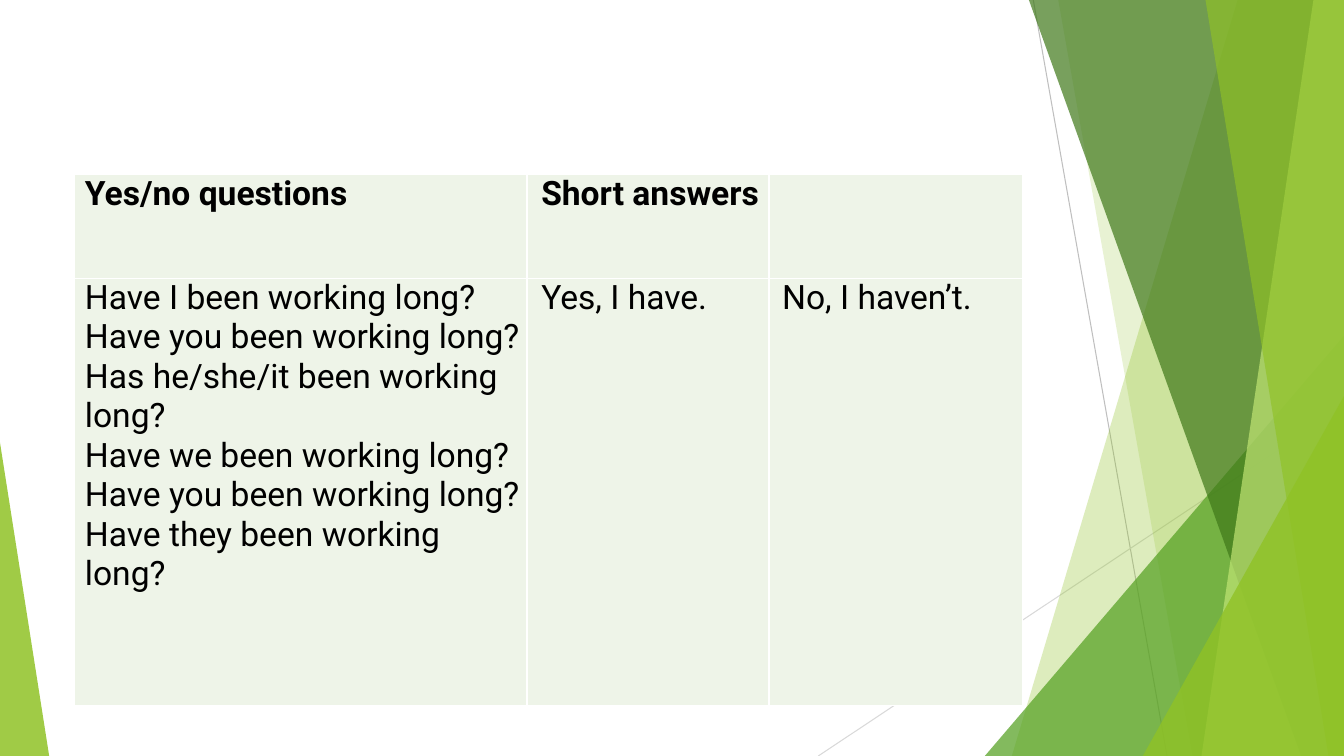
from lxml import etree
from pptx import Presentation
from pptx.dml.color import RGBColor
from pptx.enum.shapes import MSO_CONNECTOR, MSO_SHAPE
from pptx.oxml.ns import qn
from pptx.util import Cm, Pt

STRAIGHT = MSO_CONNECTOR.STRAIGHT
TRIANGLE = MSO_SHAPE.ISOSCELES_TRIANGLE

COLORS = {
    "grey": "BFBFBF", "pale grey": "D9D9D9", "lime": "90C226",
    "green": "54A021", "forest": "3F7819", "light lime": "C0E474",
    "cell": "EEF4E8", "text": "000000", "border": "FFFFFF",
}

# Lengths in cm
WIDTH, HEIGHT = 33.87, 19.05
RAYS = [  # from x, from y, to x, to y, colour
    (26.04, 0, 29.41, HEIGHT, "grey"),
    (WIDTH, 10.24, 20.62, HEIGHT, "pale grey"),
]
FACETS = [  # kind, measures, colour, opacity in percent
    ("band", (31.19, 25.5), "lime", 30),  # left edge at top and at bottom
    ("band", (26.67, 30.05), "lime", 20),
    ("peak", (24.82, 8.46, WIDTH, 1), "green", 72),  # left, top, right, apex
    ("band", (25.93, 32.79), "forest", 70),
    ("band", (33.1, 30.28), "light lime", 70),
    ("band", (30.38, 33.48), "lime", 65),
    ("peak", (28.8, 9.98, WIDTH, 1), "lime", 80),
    ("peak", (0, 11.15, 1.24, 0), "lime", 85),
]

TABLE_LEFT, TABLE_TOP = 1.88, 4.39
COLUMN_WIDTHS = [11.4, 6.1, 6.38]
ROW_HEIGHTS = [2.62, 10.77]
COLUMN_INDENTS = [0.13, 0.23, 0.2]
ROWS = [
    [["Yes/no questions"], ["Short answers"], []],
    [
        [
            "Have I been working long?",
            "Have you been working long?",
            "Has he/she/it been working long?",
            "Have we been working long?",
            "Have you been working long?",
            "Have they been working long?",
        ],
        ["Yes, I have."],
        ["No, I haven’t."],
    ],
]
CELL_FORMAT = {
    "margin_left": Cm(0.13), "margin_right": Cm(0.13),
    "margin_top": 0, "margin_bottom": 0,
}
FONT_FORMAT = {"name": "Roboto", "size": Pt(24)}


def apply_format(target, values):
    for name, value in values.items():
        setattr(target, name, value)


def rgb(color):
    return RGBColor.from_string(COLORS[color])


def add_ray(shapes, x1, y1, x2, y2, color):
    ray = shapes.add_connector(STRAIGHT, Cm(x1), Cm(y1), Cm(x2), Cm(y2))
    ray.line.color.rgb = rgb(color)
    ray.line.width = Pt(0.75)
    etree.SubElement(ray._element.spPr, qn("a:effectLst"))


def add_band(shapes, top_x, bottom_x):
    """Draw a full-height facet that reaches the right edge of the slide."""
    builder = shapes.build_freeform(Cm(top_x), 0)
    builder.add_line_segments([
        (Cm(WIDTH), 0), (Cm(WIDTH), Cm(HEIGHT)), (Cm(bottom_x), Cm(HEIGHT)),
    ])
    return builder.convert_to_shape()


def add_peak(shapes, left, top, right, apex):
    """Draw a triangle that stands on the bottom edge of the slide."""
    peak = shapes.add_shape(
        TRIANGLE, Cm(left), Cm(top), Cm(right - left), Cm(HEIGHT - top))
    peak.adjustments[0] = apex
    return peak


def paint_facet(facet, color, opacity):
    facet.shadow.inherit = False
    facet.line.fill.background()
    facet.fill.solid()
    facet.fill.fore_color.rgb = rgb(color)
    color_element = facet._element.spPr.find(qn("a:solidFill"))[0]
    etree.SubElement(color_element, qn("a:alpha"), val=str(opacity * 1000))


def add_borders(cell):
    properties = cell._tc.get_or_add_tcPr()
    for position, side in enumerate(("lnL", "lnR", "lnT", "lnB")):
        border = etree.Element(qn(f"a:{side}"), w=str(Pt(1)))
        fill = etree.SubElement(border, qn("a:solidFill"))
        etree.SubElement(fill, qn("a:srgbClr"), val=COLORS["border"])
        properties.insert(position, border)


def fill_cell(cell, lines, indent, bold):
    apply_format(cell, CELL_FORMAT)
    cell.fill.solid()
    cell.fill.fore_color.rgb = rgb("cell")
    add_borders(cell)
    if not lines:
        return
    cell.text = "\n".join(lines)
    paragraphs = cell.text_frame.paragraphs
    for paragraph in paragraphs:
        paragraph._p.get_or_add_pPr().set("marL", str(Cm(indent)))
        font = paragraph.runs[0].font
        apply_format(font, FONT_FORMAT)
        font.bold = bold
        font.color.rgb = rgb("text")
    paragraphs[0].space_before = Pt(6)
    paragraphs[-1].space_after = Pt(6)


def add_question_table(shapes):
    table = shapes.add_table(
        len(ROWS), len(COLUMN_WIDTHS), Cm(TABLE_LEFT), Cm(TABLE_TOP),
        Cm(sum(COLUMN_WIDTHS)), Cm(sum(ROW_HEIGHTS))).table
    apply_format(table, {"first_row": False, "horz_banding": False})
    for column, width in zip(table.columns, COLUMN_WIDTHS):
        column.width = Cm(width)
    for r, (height, answers) in enumerate(zip(ROW_HEIGHTS, ROWS)):
        table.rows[r].height = Cm(height)
        for c, (lines, indent) in enumerate(zip(answers, COLUMN_INDENTS)):
            fill_cell(table.cell(r, c), lines, indent, bold=r == 0)


def main():
    presentation = Presentation()
    apply_format(presentation, {"slide_width": Cm(WIDTH), "slide_height": Cm(HEIGHT)})
    blank_layout = presentation.slide_layouts[6]
    shapes = presentation.slides.add_slide(blank_layout).shapes
    for ray in RAYS:
        add_ray(shapes, *ray)
    builders = {"band": add_band, "peak": add_peak}
    for kind, measures, color, opacity in FACETS:
        paint_facet(builders[kind](shapes, *measures), color, opacity)
    add_question_table(shapes)
    presentation.save("out.pptx")


if __name__ == "__main__":
    main()
